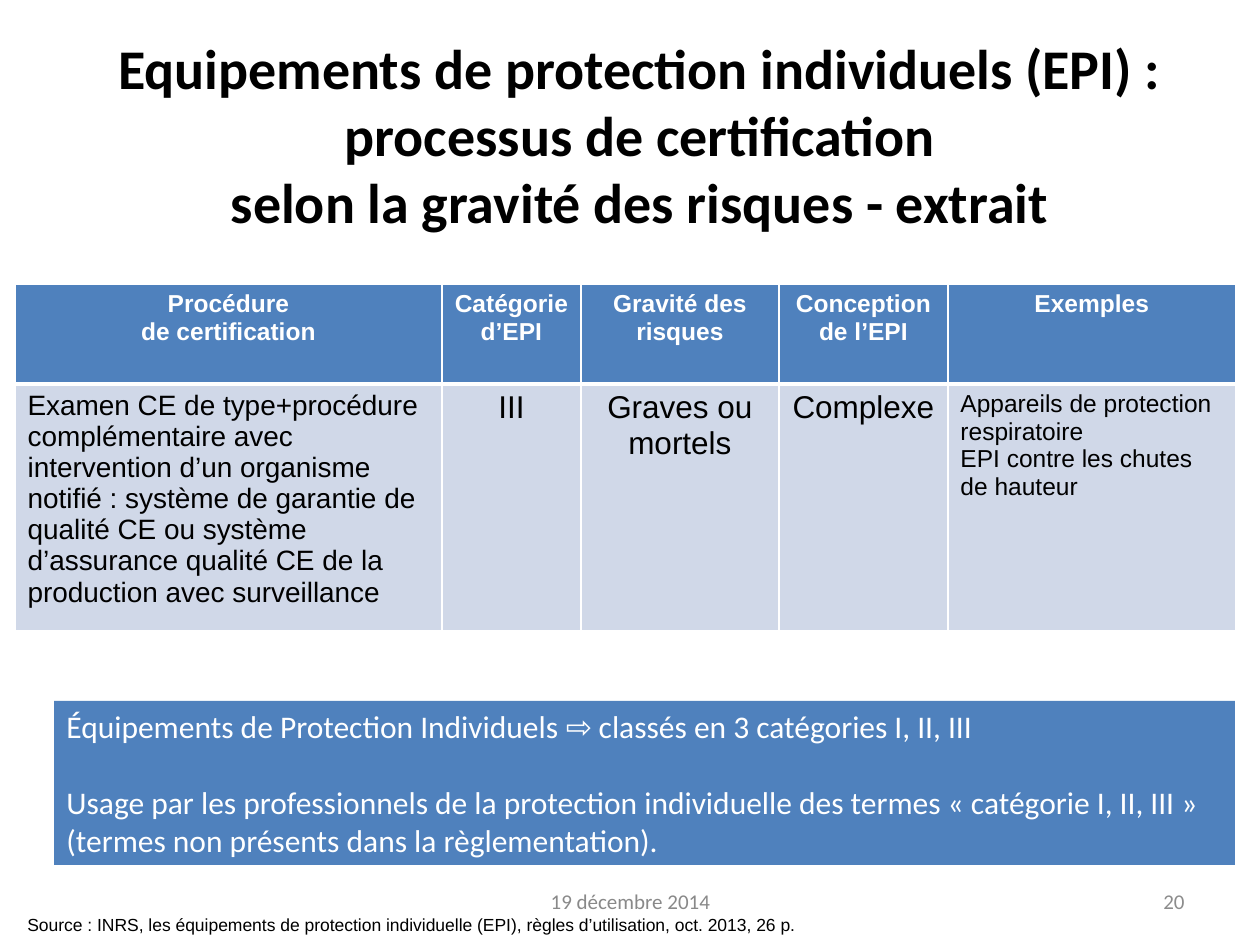
import pptx
import pptx.util
import pptx.dml.color
import pptx.enum.shapes
import pptx.enum.text
import pptx.oxml.ns
from lxml import etree

PX = 914400 // 126
BLUE, PALE, WHITE, BLACK = "4F81BD", "D0D8E8", "FFFFFF", "000000"
LEFT = pptx.enum.text.PP_ALIGN.LEFT
CENTER = pptx.enum.text.PP_ALIGN.CENTER
RIGHT = pptx.enum.text.PP_ALIGN.RIGHT
MIDDLE = pptx.enum.text.MSO_ANCHOR.MIDDLE
TOP = pptx.enum.text.MSO_ANCHOR.TOP

HEADERS = [
    ["Procédure", "de certification"],
    ["Catégorie d’EPI"],
    ["Gravité des risques"],
    ["Conception de l’EPI"],
    ["Exemples"],
]
# Body cells: paragraphs, text size, alignment
BODY = [
    (["Examen CE de type+procédure",
      "complémentaire avec intervention d’un organisme notifié : système de "
      "garantie de qualité CE ou système d’assurance qualité CE de la "
      "production avec surveillance"], 16, LEFT),
    (["III"], 18, CENTER),
    (["Graves ou mortels"], 18, CENTER),
    (["Complexe"], 18, CENTER),
    (["Appareils de protection respiratoire",
      "EPI contre les chutes de hauteur"], 14, LEFT),
]
COLUMN_WIDTHS = [427, 139, 198, 169, 288]
ROW_HEIGHTS = [100, 247]


def px(*lengths):
    return [pptx.util.Emu(length * PX) for length in lengths]


def color(code):
    return pptx.dml.color.RGBColor.from_string(code)


def paint(target, code):
    target.fill.solid()
    target.fill.fore_color.rgb = color(code)


def add_span(para, text, size, font, code, bold=False):
    span = para.add_run()
    span.text = text
    span.font.size = pptx.util.Pt(size)
    span.font.name = font
    span.font.bold = bold
    span.font.color.rgb = color(code)


def write(frame, texts, size, font, code, align=LEFT, bold=False, gap=0):
    frame.word_wrap = True
    for index, text in enumerate(texts):
        para = frame.add_paragraph() if index else frame.paragraphs[0]
        para.alignment = align
        if index and gap:
            para.space_before = pptx.util.Pt(gap)
        add_span(para, text, size, font, code, bold)


def add_title(page, lines):
    title = page.shapes.title
    title.left, title.top, title.width, title.height = px(20, 35, 1240, 198)
    frame = title.text_frame
    frame.word_wrap = True
    frame.auto_size = pptx.enum.text.MSO_AUTO_SIZE.NONE
    frame.vertical_anchor = MIDDLE
    para = frame.paragraphs[0]
    para.alignment = CENTER
    for index, line in enumerate(lines):
        if index:
            para.add_line_break()
        add_span(para, line, 32, "Calibri", BLACK, True)


def add_label(page, place, text, size, font, code, align=LEFT, anchor=TOP):
    box = page.shapes.add_textbox(*px(*place))
    box.text_frame.vertical_anchor = anchor
    write(box.text_frame, [text], size, font, code, align)


def add_panel(page, place, texts):
    panel = page.shapes.add_shape(
        pptx.enum.shapes.MSO_SHAPE.RECTANGLE, *px(*place))
    panel.shadow.inherit = False
    paint(panel, BLUE)
    panel.line.fill.background()
    panel.text_frame.vertical_anchor = TOP
    write(panel.text_frame, texts, 18, "Calibri", WHITE, gap=22)


def set_borders(cell, widths):
    properties = cell._tc.get_or_add_tcPr()
    qn = pptx.oxml.ns.qn
    for side in ("L", "R", "T", "B"):
        line = etree.SubElement(properties, qn("a:ln" + side),
                                w=str(pptx.util.Pt(widths.get(side, 1))))
        fill = etree.SubElement(line, qn("a:solidFill"))
        etree.SubElement(fill, qn("a:srgbClr"), val=WHITE)


def fill_cell(cell, texts, size, code, align, bold, background, borders):
    set_borders(cell, borders)
    paint(cell, background)
    write(cell.text_frame, texts, size, "Arial", code, align, bold)


def add_grid(page, left, top):
    table = page.shapes.add_table(
        len(ROW_HEIGHTS), len(COLUMN_WIDTHS),
        *px(left, top, sum(COLUMN_WIDTHS), sum(ROW_HEIGHTS))).table
    for column, width in zip(table.columns, px(*COLUMN_WIDTHS)):
        column.width = width
    for row, height in zip(table.rows, px(*ROW_HEIGHTS)):
        row.height = height
    for index, texts in enumerate(HEADERS):
        fill_cell(table.cell(0, index), texts, 14, WHITE, CENTER, True,
                  BLUE, {"B": 3})
    for index, (texts, size, align) in enumerate(BODY):
        fill_cell(table.cell(1, index), texts, size, BLACK, align, False,
                  PALE, {"T": 3})


def main():
    deck = pptx.Presentation()
    deck.slide_width, deck.slide_height = px(1260, 945)
    page = deck.slides.add_slide(deck.slide_layouts[5])

    # Title
    add_title(page, ["Equipements de protection individuels (EPI) :",
                     "processus de certification",
                     "selon la gravité des risques - extrait"])

    # Certification table and remark
    add_grid(page, 15, 284)
    add_panel(page, (54, 701, 1181, 164), [
        "Équipements de Protection Individuels ⇨ classés en 3 catégories "
        "I, II, III",
        "Usage par les professionnels de la protection individuelle des "
        "termes « catégorie I, II, III » (termes non présents dans la "
        "règlementation)."])

    # Footer: date, page number, source
    add_label(page, (431, 876, 399, 50), "19 décembre 2014", 12, "Calibri",
              "898989", CENTER, MIDDLE)
    add_label(page, (903, 876, 294, 50), "20", 12, "Calibri",
              "8C8C8C", RIGHT, MIDDLE)
    add_label(page, (15, 908, 847, 34),
              "Source : INRS, les équipements de protection individuelle "
              "(EPI), règles d’utilisation, oct. 2013, 26 p.",
              10, "Arial", BLACK)

    deck.save("out.pptx")


if __name__ == "__main__":
    main()
